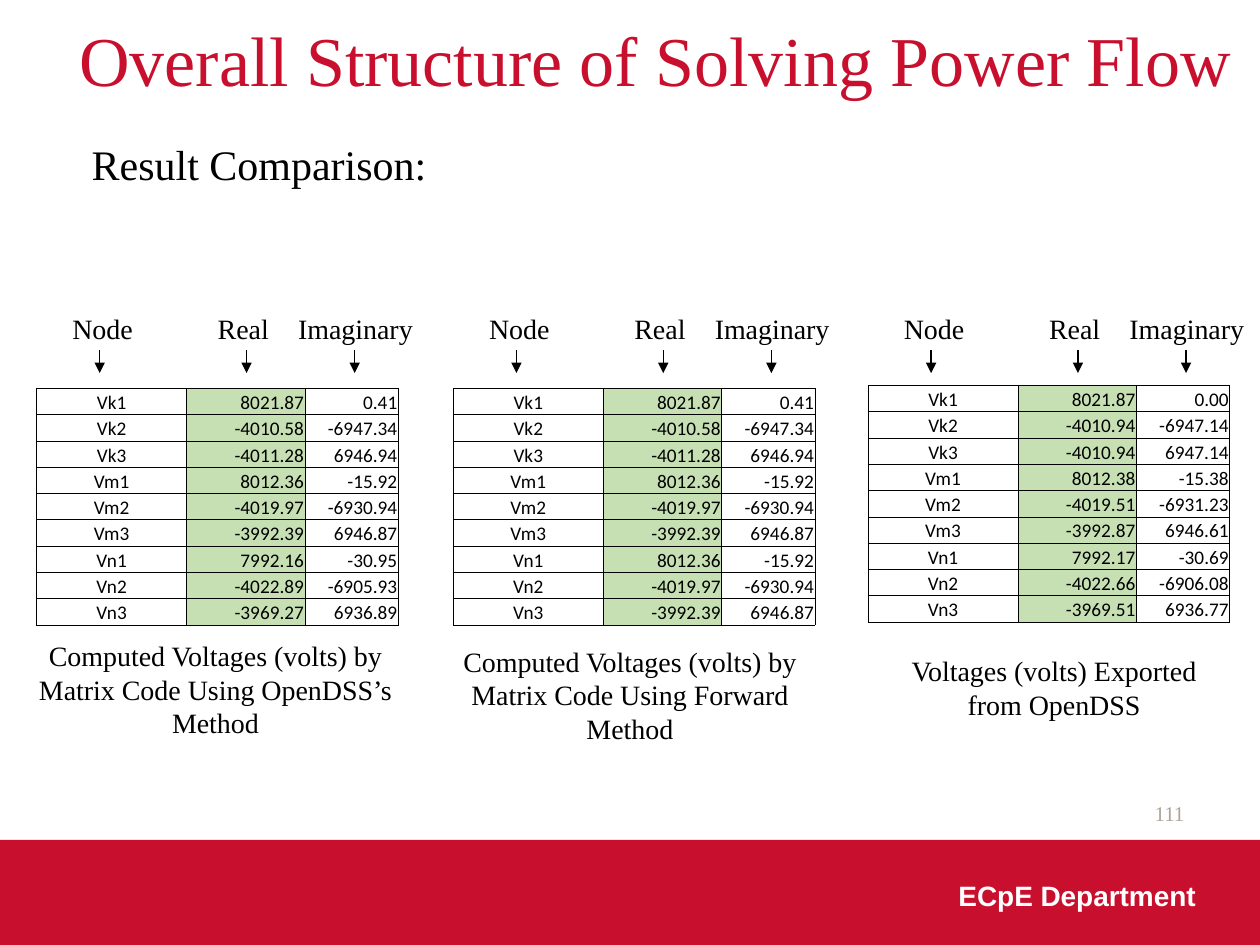
from lxml.etree import SubElement
from pptx import Presentation
from pptx.dml.color import RGBColor
from pptx.enum.shapes import MSO_CONNECTOR, MSO_SHAPE
from pptx.enum.text import MSO_ANCHOR, MSO_AUTO_SIZE, PP_ALIGN
from pptx.oxml.ns import qn
from pptx.util import Cm, Pt

THEME = {
    "red": "C8102E", "black": "000000", "white": "FFFFFF", "gray": "ACA39A", "green": "C6E0B4",
    "serif": "Times New Roman", "sans": "Arial", "table": "Calibri",
    "title": 40, "heading": 24, "body": 16, "number": 12, "cell": 11,
    "border": 0.5, "arrow": 0.75,
}

NODES = ["Vk1", "Vk2", "Vk3", "Vm1", "Vm2", "Vm3", "Vn1", "Vn2", "Vn3"]
SHARED_REAL = ["8021.87", "-4010.58", "-4011.28", "8012.36", "-4019.97", "-3992.39"]
SHARED_IMAGINARY = ["0.41", "-6947.34", "6946.94", "-15.92", "-6930.94", "6946.87"]

RESULTS = [
    {
        "left": 0.74, "top": 7.83,
        "real": SHARED_REAL + ["7992.16", "-4022.89", "-3969.27"],
        "imaginary": SHARED_IMAGINARY + ["-30.95", "-6905.93", "6936.89"],
        "caption": "Computed Voltages (volts) by Matrix Code Using OpenDSS’s Method",
        "caption_at": (0.46, 12.75, 7.77, 2.31),
    },
    {
        "left": 9.14, "top": 7.83,
        "real": SHARED_REAL + SHARED_REAL[3:],
        "imaginary": SHARED_IMAGINARY + SHARED_IMAGINARY[3:],
        "caption": "Computed Voltages (volts) by Matrix Code Using Forward Method",
        "caption_at": (9.07, 12.86, 7.26, 2.31),
    },
    {
        "left": 17.5, "top": 7.77,
        "real": ["8021.87", "-4010.94", "-4010.94", "8012.38", "-4019.51", "-3992.87",
                 "7992.17", "-4022.66", "-3969.51"],
        "imaginary": ["0.00", "-6947.14", "6947.14", "-15.38", "-6931.23", "6946.61",
                      "-30.69", "-6906.08", "6936.77"],
        "caption": "Voltages (volts) Exported from OpenDSS",
        "caption_at": (17.96, 13.06, 6.58, 1.63),
    },
]

HEADERS = [("Node", 0.47, 1.75, 1.27), ("Real", 3.4, 1.55, 4.23), ("Imaginary", 5.02, 2.87, 6.41)]
COLUMN_WIDTHS = [3.02, 2.39, 1.88]
ROW_HEIGHT = 0.53
HEADER_TOP, HEADER_HEIGHT = 6.15, 0.94
ARROW_TOP, ARROW_BOTTOM = 7.06, 7.52


def color(name):
    return RGBColor.from_string(THEME[name])


def style(para, size, font, ink, align, bold=False):
    para.alignment = align
    para.font.size = Pt(THEME[size])
    para.font.name = THEME[font]
    para.font.color.rgb = color(ink)
    para.font.bold = bold


def add_text(page, text, at, size="body", font="serif", ink="black", align=PP_ALIGN.LEFT,
             bold=False, wrap=True, anchor=MSO_ANCHOR.TOP, grow=False):
    box = page.shapes.add_textbox(*map(Cm, at))
    frame = box.text_frame
    frame.text = text
    frame.word_wrap = wrap
    frame.vertical_anchor = anchor
    frame.auto_size = MSO_AUTO_SIZE.SHAPE_TO_FIT_TEXT if grow else MSO_AUTO_SIZE.NONE
    style(frame.paragraphs[0], size, font, ink, align, bold)


def add_arrow(page, x):
    arrow = page.shapes.add_connector(
        MSO_CONNECTOR.STRAIGHT, Cm(x), Cm(ARROW_TOP), Cm(x), Cm(ARROW_BOTTOM))
    arrow.line.color.rgb = color("black")
    arrow.line.width = Pt(THEME["arrow"])
    SubElement(arrow.line._get_or_add_ln(), qn("a:tailEnd"), type="triangle")
    SubElement(arrow._element.spPr, qn("a:effectLst"))


def add_borders(cell):
    properties = cell._tc.get_or_add_tcPr()
    for side in ("L", "R", "T", "B"):
        line = SubElement(properties, qn(f"a:ln{side}"), w=str(Pt(THEME["border"])))
        fill = SubElement(line, qn("a:solidFill"))
        SubElement(fill, qn("a:srgbClr"), val=THEME["black"])


def fill_cell(cell, text, column):
    add_borders(cell)
    if column == 1:
        cell.fill.solid()
        cell.fill.fore_color.rgb = color("green")
    else:
        cell.fill.background()
    cell.margin_left = cell.margin_right = cell.margin_top = Cm(0.02)
    cell.margin_bottom = Cm(0)
    cell.vertical_anchor = MSO_ANCHOR.BOTTOM
    cell.text = text
    align = PP_ALIGN.RIGHT if column else PP_ALIGN.CENTER
    style(cell.text_frame.paragraphs[0], "cell", "table", "black", align)


def add_result(page, result):
    rows = list(zip(NODES, result["real"], result["imaginary"]))
    table = page.shapes.add_table(
        len(rows), len(COLUMN_WIDTHS), Cm(result["left"]), Cm(result["top"]),
        Cm(sum(COLUMN_WIDTHS)), Cm(ROW_HEIGHT * len(rows))).table
    table.first_row = table.horz_banding = False
    for column, width in zip(table.columns, COLUMN_WIDTHS):
        column.width = Cm(width)
    for row, values in enumerate(rows):
        table.rows[row].height = Cm(ROW_HEIGHT)
        for column, value in enumerate(values):
            fill_cell(table.cell(row, column), value, column)

    for label, offset, width, arrow_offset in HEADERS:
        at = (result["left"] + offset, HEADER_TOP, width, HEADER_HEIGHT)
        add_text(page, label, at, wrap=False, grow=True)
        add_arrow(page, result["left"] + arrow_offset)
    add_text(page, result["caption"], result["caption_at"], align=PP_ALIGN.CENTER, grow=True)


def main():
    deck = Presentation()
    deck.slide_width, deck.slide_height = Cm(25.4), Cm(19.05)
    page = deck.slides.add_slide(deck.slide_layouts[6])

    band = page.shapes.add_shape(MSO_SHAPE.RECTANGLE, Cm(0), Cm(16.93), Cm(25.4), Cm(2.12))
    band.shadow.inherit = False
    band.fill.solid()
    band.fill.fore_color.rgb = color("red")
    band.line.fill.background()

    add_text(page, "111", (18.21, 15.88, 5.92, 1.02), size="number", ink="gray",
             align=PP_ALIGN.RIGHT, anchor=MSO_ANCHOR.MIDDLE)
    add_text(page, "ECpE Department", (17.58, 17.58, 6.78, 1.07), font="sans", ink="white",
             align=PP_ALIGN.RIGHT, bold=True)
    add_text(page, "Overall Structure of Solving Power Flow", (1.35, 0.2, 23.83, 1.96),
             size="title", ink="red", anchor=MSO_ANCHOR.MIDDLE)
    add_text(page, "Result Comparison:", (1.6, 2.67, 21.69, 1.27), size="heading", grow=True)
    for result in RESULTS:
        add_result(page, result)
    deck.save("out.pptx")


if __name__ == "__main__":
    main()
